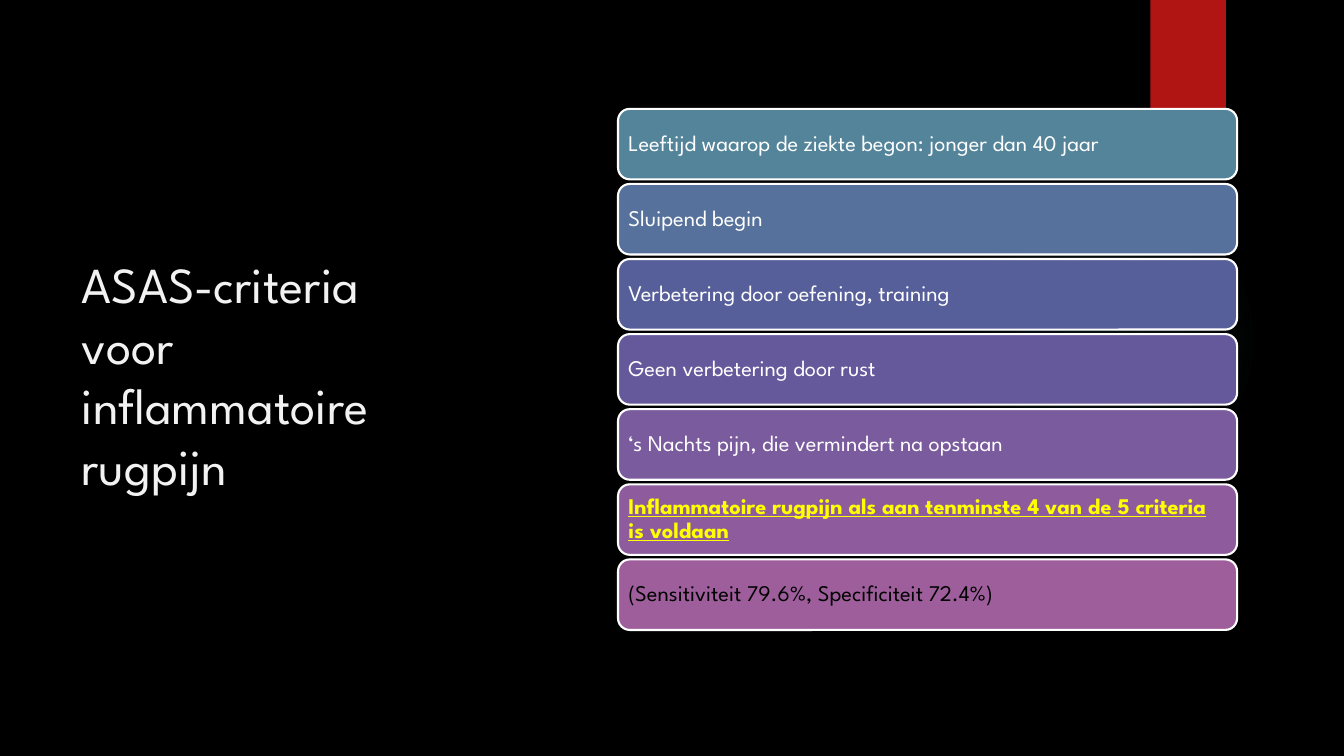
from pptx import Presentation
from pptx.dml.color import RGBColor
from pptx.enum.shapes import MSO_SHAPE
from pptx.enum.text import MSO_ANCHOR, MSO_AUTO_SIZE, PP_ALIGN
from pptx.oxml import parse_xml
from pptx.oxml.ns import nsdecls
from pptx.util import Inches, Pt

OVAL, RECT, ROUND = MSO_SHAPE.OVAL, MSO_SHAPE.RECTANGLE, MSO_SHAPE.ROUNDED_RECTANGLE
MIDDLE, LEFT, NO_FIT = MSO_ANCHOR.MIDDLE, PP_ALIGN.LEFT, MSO_AUTO_SIZE.NONE
FONT = "League Spartan"
COLORS = {"back": "000000", "glow": "50B9C1", "tab": "B01513", "title": "F2F2F2",
          "white": "FFFFFF", "yellow": "FFFF00", "black": "000000"}


def add_run(par, text, size, color):
    run = par.add_run()
    run.text = text
    run.font.name = FONT
    run.font.size = Pt(size)
    run.font.color.rgb = RGBColor.from_string(COLORS[color])
    return run


def add_box(kind, left, top, width, height):
    box = slide.shapes.add_shape(kind, Inches(left), Inches(top), Inches(width), Inches(height))
    box.shadow.inherit = False
    return box


prs = Presentation()
prs.slide_width, prs.slide_height = Inches(13.33), Inches(7.5)
slide = prs.slides.add_slide(prs.slide_layouts[5])
slide.background.fill.solid()
slide.background.fill.fore_color.rgb = RGBColor.from_string(COLORS["back"])

# Faint round glow
glow = add_box(OVAL, 9.41, 1.83, 3.08, 3.08)
glow.line.fill.background()
glow.fill.background()
stops = "".join(
    f'<a:gs pos="{pos * 1000}"><a:srgbClr val="{COLORS["glow"]}">'
    f'<a:alpha val="{alpha * 1000}"/></a:srgbClr></a:gs>'
    for pos, alpha in [(0, 7), (36, 6), (69, 0)])
grad = parse_xml(
    f'<a:gradFill {nsdecls("a")}><a:gsLst>{stops}</a:gsLst><a:path path="circle">'
    '<a:fillToRect l="50000" t="50000" r="50000" b="50000"/></a:path></a:gradFill>')
props = glow.element.spPr
props.replace(props.find("{*}noFill"), grad)

# Red tab at the top edge
tab = add_box(RECT, 11.41, 0, 0.75, 1.25)
tab.fill.solid()
tab.fill.fore_color.rgb = RGBColor.from_string(COLORS["tab"])
tab.line.fill.background()

# Title
title = slide.shapes.title
title.left, title.top = Inches(0.71), Inches(1.16)
title.width, title.height = Inches(3.83), Inches(5.11)
frame = title.text_frame
frame.word_wrap = True
frame.auto_size = NO_FIT
frame.vertical_anchor = MIDDLE
frame.paragraphs[0].alignment = LEFT
add_run(frame.paragraphs[0], "ASAS-criteria voor inflammatoire rugpijn", 36, "title")

# Criteria bars: text, fill, text colour
BARS = [
    ("Leeftijd waarop de ziekte begon: jonger dan 40 jaar", "54849A", "white"),
    ("Sluipend begin", "56719B", "white"),
    ("Verbetering door oefening, training", "575F9B", "white"),
    ("Geen verbetering door rust", "65599C", "white"),
    ("‘s Nachts pijn, die vermindert na opstaan", "7A5B9D", "white"),
    ("Inflammatoire rugpijn als aan tenminste 4 van de 5 criteria is voldaan",
     "8E5C9D", "yellow"),
    ("(Sensitiviteit 79.6%, Specificiteit 72.4%)", "9E5E9B", "black"),
]
TOP, STEP = 1.08, 0.745
for i, (text, fill, color) in enumerate(BARS):
    bar = add_box(ROUND, 6.13, TOP + i * STEP, 6.14, 0.7)
    bar.fill.solid()
    bar.fill.fore_color.rgb = RGBColor.from_string(fill)
    bar.line.color.rgb = RGBColor.from_string(COLORS["white"])
    bar.line.width = Pt(1.5)
    frame = bar.text_frame
    frame.word_wrap = True
    frame.vertical_anchor = MIDDLE
    frame.margin_left = frame.margin_right = Inches(0.07)
    frame.margin_top = frame.margin_bottom = Inches(0.07)
    par = frame.paragraphs[0]
    par.alignment = LEFT
    par.line_spacing = 0.9
    run = add_run(par, text, 16, color)
    if color == "yellow":
        run.font.bold = run.font.underline = True

prs.save("out.pptx")
